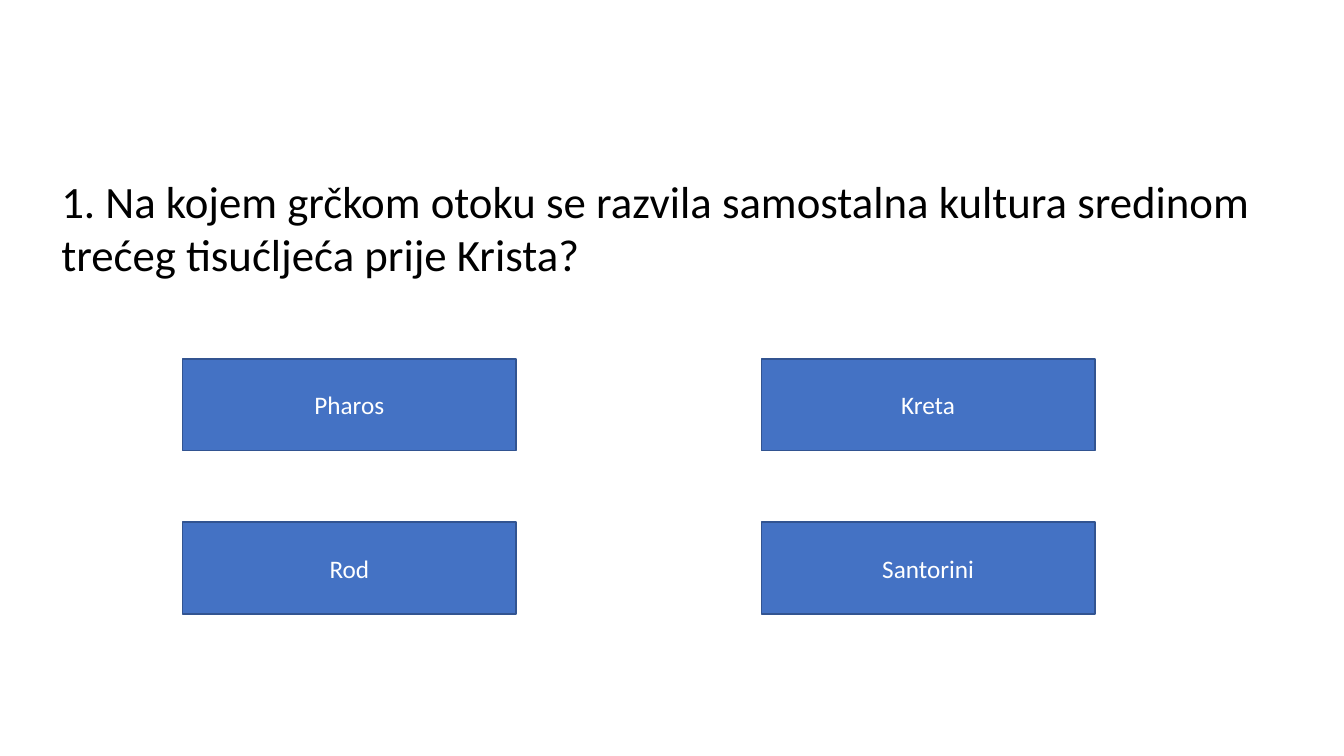
import pptx
import pptx.dml.color
import pptx.enum.shapes
import pptx.enum.text
import pptx.util
from pptx.dml.color import RGBColor
from pptx.util import Inches

BLACK = RGBColor(0x00, 0x00, 0x00)
WHITE = RGBColor(0xFF, 0xFF, 0xFF)
BLUE = RGBColor(0x44, 0x72, 0xC4)
DARK_BLUE = RGBColor(0x32, 0x54, 0x91)

FONT = "Calibri"
QUESTION = (
    "1. Na kojem grčkom otoku se razvila samostalna kultura sredinom "
    "trećeg tisućljeća prije Krista?"
)
ANSWERS = ["Pharos", "Kreta", "Rod", "Santorini"]
COLUMNS = 2
BUTTON_WIDTH, BUTTON_HEIGHT = 3.31, 0.91


def write_text(shape, text, size, color):
    shape.text_frame.word_wrap = True
    shape.text_frame.text = text
    paragraph = shape.text_frame.paragraphs[0]
    font = paragraph.runs[0].font
    font.name = FONT
    font.size = pptx.util.Pt(size)
    font.color.rgb = color
    return paragraph


def add_question(slide, left, top, width, height):
    box = slide.shapes.add_textbox(
        Inches(left), Inches(top), Inches(width), Inches(height)
    )
    write_text(box, QUESTION, 32, BLACK)
    box.text_frame.auto_size = pptx.enum.text.MSO_AUTO_SIZE.SHAPE_TO_FIT_TEXT


def add_button(slide, text, left, top):
    button = slide.shapes.add_shape(
        pptx.enum.shapes.MSO_SHAPE.RECTANGLE,
        Inches(left), Inches(top), Inches(BUTTON_WIDTH), Inches(BUTTON_HEIGHT),
    )
    button.shadow.inherit = False
    button.fill.solid()
    button.fill.fore_color.rgb = BLUE
    button.line.color.rgb = DARK_BLUE
    button.line.width = pptx.util.Pt(1)
    paragraph = write_text(button, text, 18, WHITE)
    paragraph.alignment = pptx.enum.text.PP_ALIGN.CENTER
    button.text_frame.vertical_anchor = pptx.enum.text.MSO_ANCHOR.MIDDLE


def add_answers(slide, left, top, width, height):
    # Outer buttons touch the edges of the given box
    column_step = (width - BUTTON_WIDTH) / (COLUMNS - 1)
    rows = len(ANSWERS) // COLUMNS
    row_step = (height - BUTTON_HEIGHT) / (rows - 1)
    for index, answer in enumerate(ANSWERS):
        row, column = divmod(index, COLUMNS)
        add_button(slide, answer, left + column * column_step, top + row * row_step)


def main():
    presentation = pptx.Presentation()
    presentation.slide_width = Inches(13.33)
    presentation.slide_height = Inches(7.5)
    slide = presentation.slides.add_slide(presentation.slide_layouts[6])

    # Question above, answer grid below
    add_question(slide, 0.51, 1.67, 12.46, 1.18)
    add_answers(slide, 1.81, 3.56, 9.05, 2.53)

    presentation.save("out.pptx")


if __name__ == "__main__":
    main()
